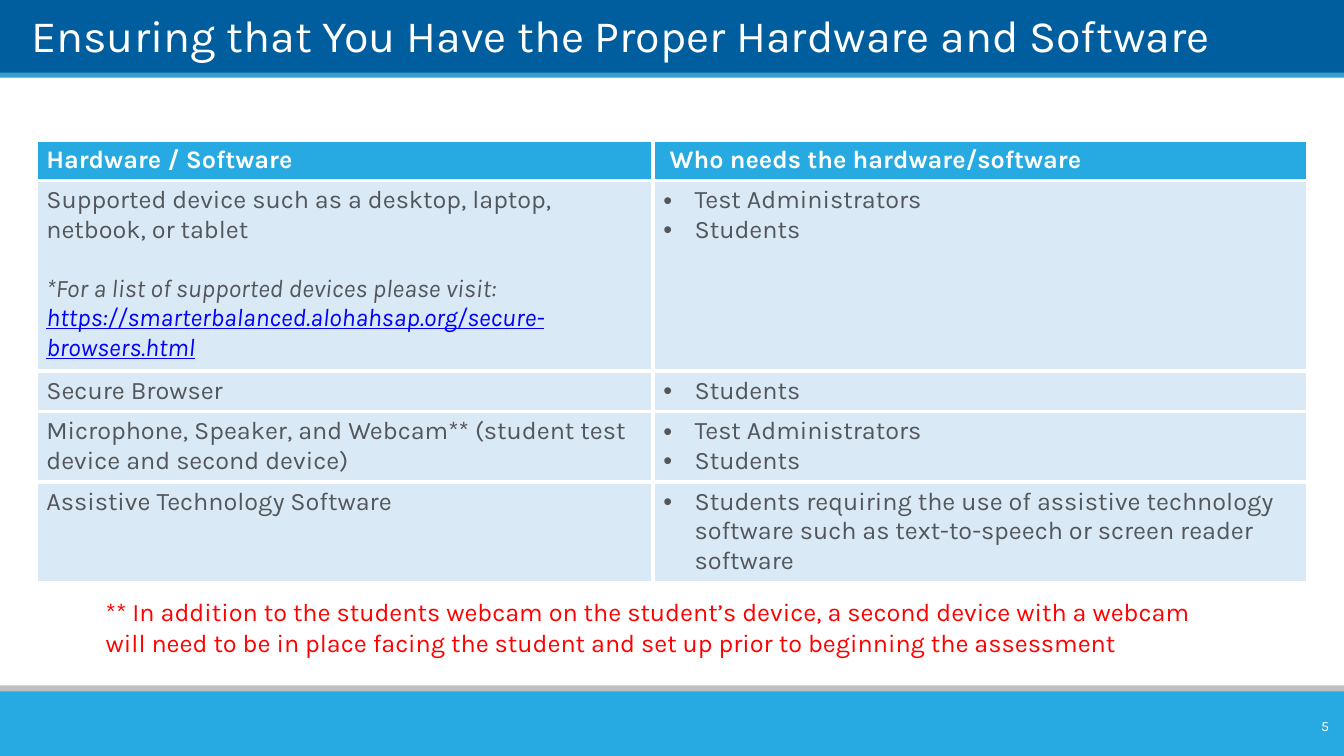
from dataclasses import dataclass

from lxml.etree import SubElement
from pptx import Presentation
from pptx.dml.color import RGBColor as RGB
from pptx.enum.shapes import MSO_SHAPE as SHAPE
from pptx.enum.text import MSO_ANCHOR as ANCHOR, PP_ALIGN as ALIGN
from pptx.oxml.ns import qn
from pptx.util import Inches, Pt

COLUMNS, ROWS = 1333, 750
WIDTH, HEIGHT = Inches(13.33), Inches(7.5)


@dataclass(frozen=True)
class Theme:
    font: str = "Karla"
    navy: str = "005E9E"
    stripe: str = "35A0CE"
    sky: str = "27AAE1"
    gray: str = "BFBFBF"
    pale: str = "DAE9F6"
    ink: str = "53565A"
    link: str = "0000FF"
    alert: str = "FF0000"
    white: str = "FFFFFF"
    title: int = 32
    body: int = 18
    small: int = 10
    line: int = 21
    border: int = 3


@dataclass(frozen=True)
class Box:
    x: float
    y: float
    w: float
    h: float

    def inner(self, x, y, w, h):
        return Box(self.x + x, self.y + y, w, h)

    def emu(self):
        col, row = WIDTH / COLUMNS, HEIGHT / ROWS
        return [round(v) for v in
                (self.x * col, self.y * row, self.w * col, self.h * row)]


T = Theme()


def add_run(p, text, size=T.body, color=T.ink, bold=False, italic=False,
            underline=False):
    r = p.add_run()
    r.text = text
    f = r.font
    f.name, f.size, f.color.rgb = T.font, Pt(size), RGB.from_string(color)
    f.bold, f.italic, f.underline = bold, italic, underline


def add_bullet(p):
    pPr = p._p.get_or_add_pPr()
    pPr.set("marL", str(Inches(0.31)))
    pPr.set("indent", str(-Inches(0.31)))
    SubElement(pPr, qn("a:buFont"), typeface="Arial")
    SubElement(pPr, qn("a:buChar"), char="•")


def add_bar(s, box, color):
    sp = s.shapes.add_shape(SHAPE.RECTANGLE, *box.emu())
    sp.shadow.inherit = False
    sp.fill.solid()
    sp.fill.fore_color.rgb = RGB.from_string(color)
    sp.line.fill.background()


def add_text(s, box, text, anchor=ANCHOR.TOP, align=ALIGN.LEFT, inset=True,
             **style):
    tf = s.shapes.add_textbox(*box.emu()).text_frame
    tf.word_wrap = True
    tf.vertical_anchor = anchor
    if not inset:
        tf.margin_left = tf.margin_right = tf.margin_top = tf.margin_bottom = 0
    p = tf.paragraphs[0]
    p.alignment = align
    add_run(p, text, **style)


def style_cell(cell, color):
    cell.fill.solid()
    cell.fill.fore_color.rgb = RGB.from_string(color)
    tcPr = cell._tc.get_or_add_tcPr()
    for i, side in enumerate(("lnL", "lnR", "lnT", "lnB")):
        ln = SubElement(tcPr, qn(f"a:{side}"), w=str(Pt(T.border)))
        SubElement(SubElement(ln, qn("a:solidFill")), qn("a:srgbClr"),
                   val=T.white)
        tcPr.insert(i, ln)


def header(s, box, title):
    add_bar(s, box.inner(0, -1, box.w, 75), T.navy)
    add_bar(s, box.inner(0, 72, box.w, 5), T.stripe)
    add_text(s, box.inner(31, 4, 1220, 57), title, anchor=ANCHOR.BOTTOM,
             inset=False, size=T.title, color=T.white)


def footer(s, box, number):
    add_bar(s, box.inner(0, 0, box.w, 14), T.gray)
    add_bar(s, box.inner(0, 6, box.w, 64), T.sky)
    add_text(s, box.inner(1251, 25, 77, 30), number, anchor=ANCHOR.MIDDLE,
             align=ALIGN.RIGHT, size=T.small, color=T.white)


def requirements(s, box, heads, rows, widths, heights):
    frame = s.shapes.add_table(len(rows) + 1, len(heads), *box.emu())
    table = frame.table
    table.horz_banding = False
    for column, w in zip(table.columns, widths):
        column.width = round(w * WIDTH / COLUMNS)
    for row, h in zip(table.rows, heights):
        row.height = round(h * HEIGHT / ROWS)
    for c, head in enumerate(heads):
        cell = table.cell(0, c)
        style_cell(cell, T.sky)
        add_run(cell.text_frame.paragraphs[0], head, color=T.white, bold=True)
    for r, (item, users) in enumerate(rows, 1):
        left, right = table.cell(r, 0), table.cell(r, 1)
        style_cell(left, T.pale)
        style_cell(right, T.pale)
        add_run(left.text_frame.paragraphs[0], item)
        tf = right.text_frame
        for i, user in enumerate(users):
            p = tf.add_paragraph() if i else tf.paragraphs[0]
            add_bullet(p)
            add_run(p, user)
    return table


def device_link(cell, lead, address):
    p = cell.text_frame.add_paragraph()
    p.space_before = Pt(T.line)
    add_run(p, lead, italic=True)
    add_run(p, address, color=T.link, italic=True, underline=True)


def main():
    prs = Presentation()
    prs.slide_width, prs.slide_height = WIDTH, HEIGHT
    s = prs.slides.add_slide(prs.slide_layouts[6])
    page = Box(0, 0, COLUMNS, ROWS)
    admins, students = "Test Administrators", "Students"

    header(s, page.inner(0, 0, COLUMNS, 77),
           "Ensuring that You Have the Proper Hardware and Software")
    footer(s, page.inner(0, 680, COLUMNS, 70), "5")
    table = requirements(
        s, page.inner(36, 139, 1261, 432),
        ("Hardware / Software", " Who needs the hardware/software"),
        (("Supported device such as a desktop, laptop, netbook, or tablet",
          (admins, students)),
         ("Secure Browser", (students,)),
         ("Microphone, Speaker, and Webcam** "
          "(student test device and second device)", (admins, students)),
         ("Assistive Technology Software",
          ("Students requiring the use of assistive technology software "
           "such as text-to-speech or screen reader software",))),
        widths=(612, 649), heights=(39, 187, 39, 69, 98))
    device_link(table.cell(1, 0),
                "*For a list of supported devices please visit: ",
                "https://smarterbalanced.alohahsap.org/secure-browsers.html")
    add_text(s, page.inner(95, 587, 1121, 71),
             "** In addition to the students webcam on the student’s device, "
             "a second device with a webcam will need to be in place facing "
             "the student and set up prior to beginning the assessment",
             color=T.alert)
    prs.save("out.pptx")


if __name__ == "__main__":
    main()
